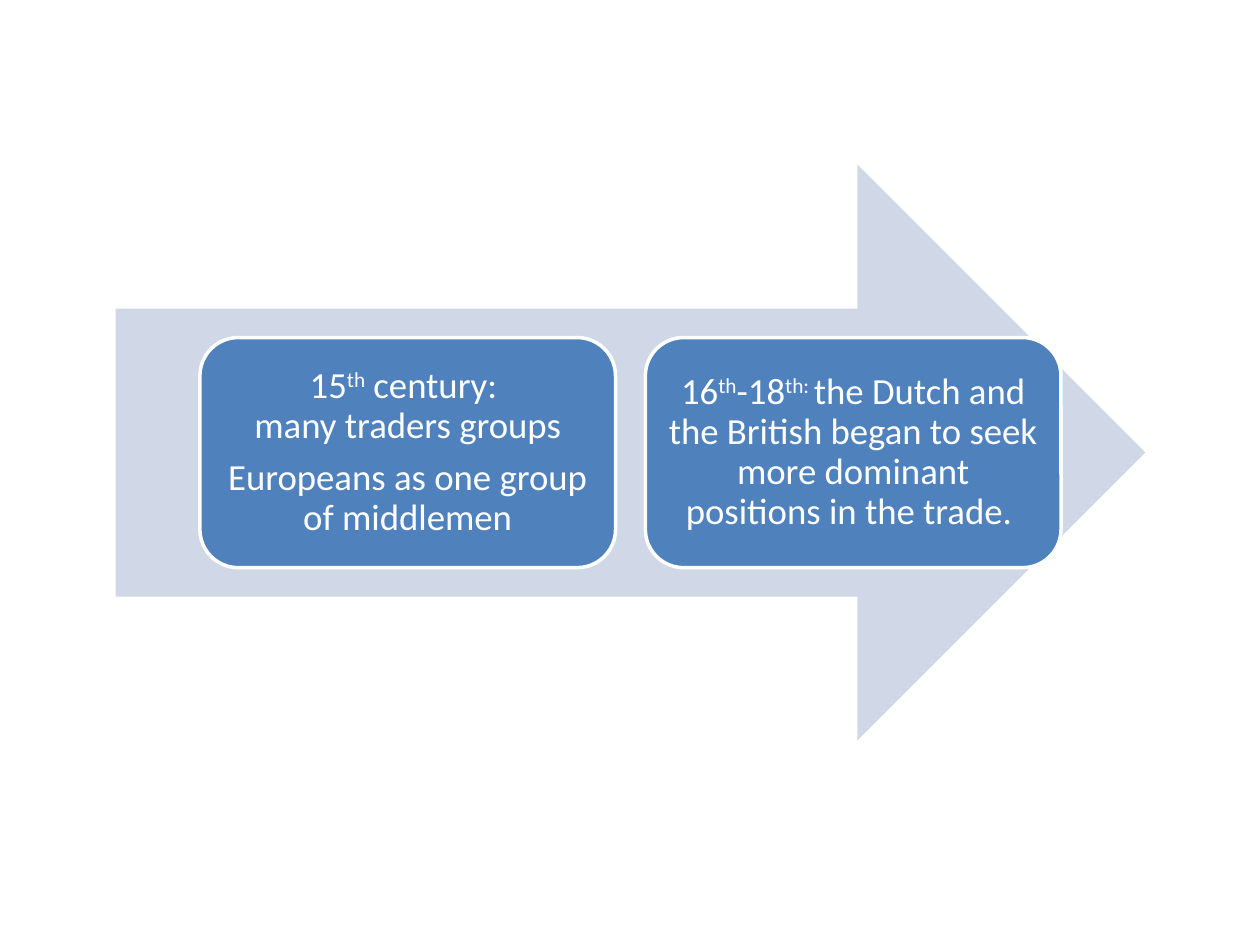
from dataclasses import dataclass

from pptx import Presentation
from pptx.dml.color import RGBColor
from pptx.enum.shapes import MSO_SHAPE
from pptx.enum.text import MSO_ANCHOR, PP_ALIGN
from pptx.util import Cm, Pt

RIGHT_ARROW = MSO_SHAPE.RIGHT_ARROW
ROUNDED_RECTANGLE = MSO_SHAPE.ROUNDED_RECTANGLE
MIDDLE = MSO_ANCHOR.MIDDLE
CENTER = PP_ALIGN.CENTER

WHITE = "FFFFFF"
BLUE = "4F81BD"
PALE_BLUE = "D0D8E8"
FONT_NAME = "Calibri"
SUPERSCRIPT = "30000"

ARROW_LEFT, ARROW_TOP = 2.33, 3.32
ARROW_WIDTH, ARROW_HEIGHT = 20.76, 11.61
BOX_WIDTH, BOX_HEIGHT, BOX_GAP = 8.38, 4.64, 0.6
BOX_MARGIN = 0.23


@dataclass
class TextPart:
    text: str
    raised: bool = False


@dataclass
class Period:
    paragraphs: list[list[TextPart]]


PERIODS = [
    Period([
        [TextPart("15"), TextPart("th", True), TextPart(" century: \nmany traders groups")],
        [TextPart("Europeans as one group of middlemen")],
    ]),
    Period([
        [
            TextPart("16"),
            TextPart("th", True),
            TextPart("-18"),
            TextPart("th: ", True),
            TextPart("the Dutch and the British began to seek more dominant positions in the trade. "),
        ],
    ]),
]


def color(value: str) -> RGBColor:
    return RGBColor.from_string(value)


def add_filled_shape(slide, kind, left: float, top: float, width: float, height: float, fill: str):
    shape = slide.shapes.add_shape(kind, Cm(left), Cm(top), Cm(width), Cm(height))
    shape.shadow.inherit = False
    shape.fill.solid()
    shape.fill.fore_color.rgb = color(fill)
    shape.line.fill.background()
    return shape


def write_paragraph(paragraph, parts: list[TextPart]) -> None:
    paragraph.alignment = CENTER
    paragraph.line_spacing = 0.9
    paragraph.space_after = Pt(7)
    paragraph.font.name = FONT_NAME
    paragraph.font.size = Pt(21)
    paragraph.font.color.rgb = color(WHITE)
    for part in parts:
        for index, line in enumerate(part.text.split("\n")):
            if index:
                paragraph.add_line_break()
            run = paragraph.add_run()
            run.text = line
            if part.raised:
                run._r.get_or_add_rPr().set("baseline", SUPERSCRIPT)


def add_period(slide, period: Period, left: float, top: float) -> None:
    box = add_filled_shape(slide, ROUNDED_RECTANGLE, left, top, BOX_WIDTH, BOX_HEIGHT, BLUE)
    box.line.color.rgb = color(WHITE)
    box.line.width = Pt(2)
    frame = box.text_frame
    frame.word_wrap = True
    frame.vertical_anchor = MIDDLE
    frame.margin_left = frame.margin_right = Cm(BOX_MARGIN)
    frame.margin_top = frame.margin_bottom = Cm(BOX_MARGIN)
    for index, parts in enumerate(period.paragraphs):
        paragraph = frame.add_paragraph() if index else frame.paragraphs[0]
        write_paragraph(paragraph, parts)


def main() -> None:
    presentation = Presentation()
    presentation.slide_width = Cm(25.4)
    presentation.slide_height = Cm(19.05)
    slide = presentation.slides.add_slide(presentation.slide_layouts[6])

    add_filled_shape(slide, RIGHT_ARROW, ARROW_LEFT, ARROW_TOP, ARROW_WIDTH, ARROW_HEIGHT, PALE_BLUE)

    step = BOX_WIDTH + BOX_GAP
    row_width = len(PERIODS) * step - BOX_GAP
    first_left = ARROW_LEFT + (ARROW_WIDTH - row_width) / 2
    top = ARROW_TOP + (ARROW_HEIGHT - BOX_HEIGHT) / 2
    for index, period in enumerate(PERIODS):
        add_period(slide, period, first_left + index * step, top)

    presentation.save("out.pptx")


if __name__ == "__main__":
    main()
